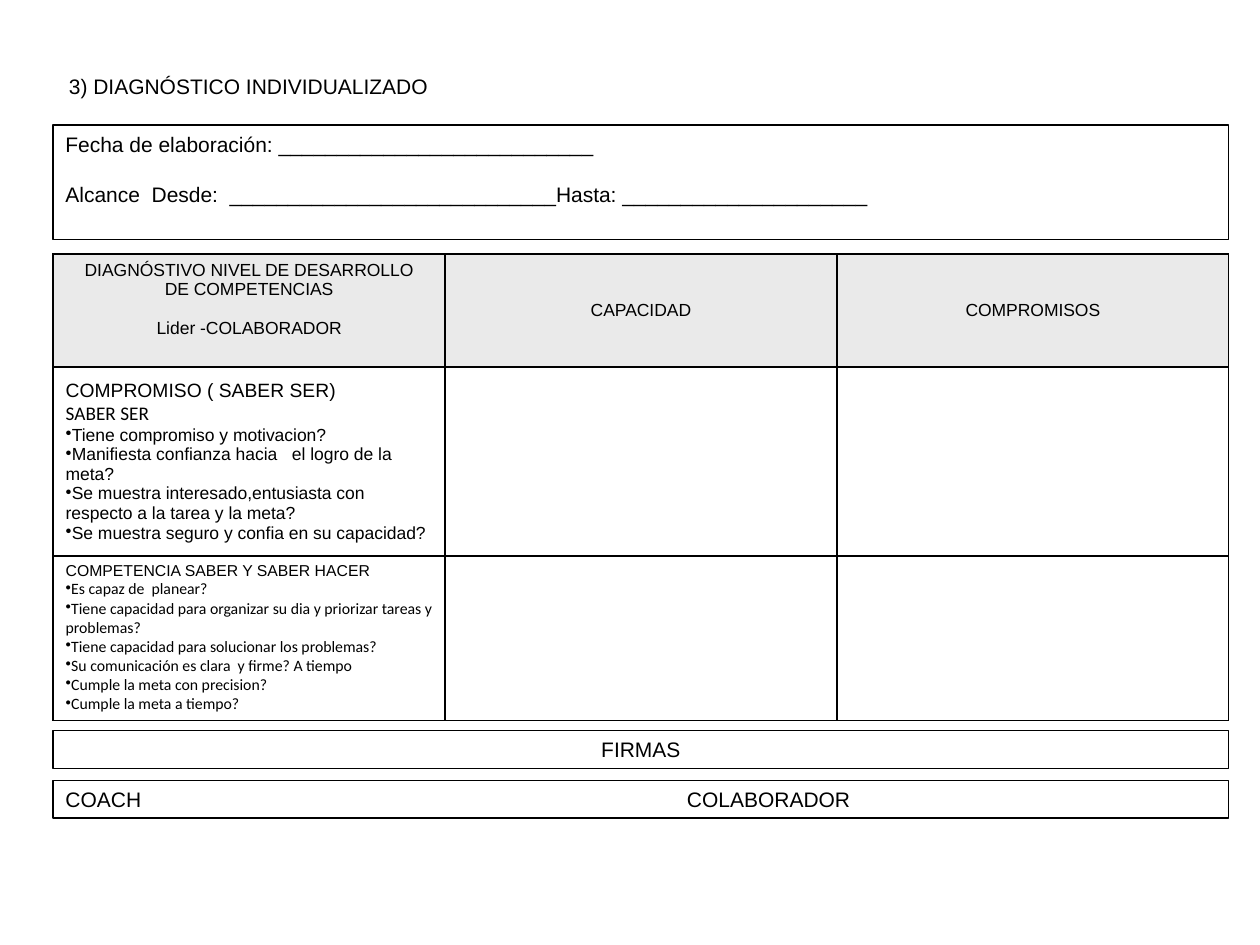
from pptx import Presentation
from pptx.dml.color import RGBColor
from pptx.enum.shapes import MSO_SHAPE as Shape
from pptx.enum.text import MSO_ANCHOR as Anchor, PP_ALIGN as Align
from pptx.oxml import parse_xml
from pptx.oxml.ns import nsdecls
from pptx.util import Cm, Pt

BLACK, GRAY = "000000", "EAEAEA"
LEFT, WIDTH = 1.07, 23.7
BAR_HEIGHT = 0.76
ROW_HEIGHTS = [2.28, 3.81, 3.3]

# Each line: text, size, font, bulleted, space before in points
HEADERS = [
    [("DIAGNÓSTIVO NIVEL DE DESARROLLO", 10, "Arial", False, 0),
     ("DE COMPETENCIAS", 10, "Arial", False, 0),
     ("Lider -COLABORADOR", 10, "Arial", False, 11.2)],
    [("CAPACIDAD", 10, "Arial", False, 0)],
    [("COMPROMISOS", 10, "Arial", False, 0)],
]
COMMITMENT = [
    ("COMPROMISO ( SABER SER)", 11, "Arial", False, 0),
    ("SABER SER", 11, "Calibri", False, 0),
] + [(text, 10, "Arial", True, 0) for text in (
    "Tiene compromiso y motivacion?",
    "Manifiesta confianza hacia   el logro de la meta?",
    "Se muestra interesado,entusiasta con respecto a la tarea y la meta?",
    "Se muestra seguro y confia en su capacidad?",
)]
COMPETENCE = [
    ("COMPETENCIA SABER Y SABER HACER", 9, "Arial", False, 0),
] + [(text, 9, "Calibri", True, 0) for text in (
    "Es capaz de  planear?",
    "Tiene capacidad para organizar su dia y priorizar tareas y problemas?",
    "Tiene capacidad para solucionar los problemas?",
    "Su comunicación es clara  y firme? A tiempo",
    "Cumple la meta con precision?",
    "Cumple la meta a tiempo?",
)]


def color(value):
    return RGBColor.from_string(value)


def add_bullet(para):
    props = para._p.get_or_add_pPr()
    props.set("marL", "0")
    props.set("indent", "0")
    props.append(parse_xml(f'<a:buChar {nsdecls("a")} char="•"/>'))


def add_tab(para, position):
    para._p.get_or_add_pPr().append(parse_xml(
        f'<a:tabLst {nsdecls("a")}><a:tab pos="{Cm(position)}" algn="l"/></a:tabLst>'))


def write(frame, lines, align=Align.LEFT):
    frame.word_wrap = True
    for index, (text, size, font, bulleted, space) in enumerate(lines):
        para = frame.paragraphs[0] if index == 0 else frame.add_paragraph()
        para.text = text
        para.alignment = align
        if space:
            para.space_before = Pt(space)
        if bulleted:
            add_bullet(para)
        for span in para.runs:
            span.font.size = Pt(size)
            span.font.name = font
            span.font.color.rgb = color(BLACK)


def add_title(page, left, top, width, height):
    box = page.shapes.add_textbox(Cm(left), Cm(top), Cm(width), Cm(height))
    write(box.text_frame, [("3) DIAGNÓSTICO INDIVIDUALIZADO", 12, "Arial", False, 0)])


def add_framed_box(page, left, top, width, height, lines, align=Align.LEFT):
    box = page.shapes.add_shape(Shape.RECTANGLE, Cm(left), Cm(top), Cm(width), Cm(height))
    box.shadow.inherit = False
    box.fill.background()
    box.line.color.rgb = color(BLACK)
    box.line.width = Pt(0.75)
    box.text_frame.vertical_anchor = Anchor.TOP
    write(box.text_frame, lines, align)
    return box


def add_dates(page, left, top, width, height):
    period = "Alcance  Desde:  " + "_" * 28 + "Hasta: " + "_" * 21
    add_framed_box(page, left, top, width, height, [
        ("Fecha de elaboración: " + "_" * 27, 12, "Arial", False, 0),
        (period, 12, "Arial", False, 14.6),
    ])


def add_borders(cell):
    props = cell._tc.get_or_add_tcPr()
    for side in "LRTB":
        props.append(parse_xml(
            f'<a:ln{side} {nsdecls("a")} w="{Pt(1)}"><a:solidFill>'
            f'<a:srgbClr val="{BLACK}"/></a:solidFill></a:ln{side}>'))


def add_diagnosis(page, left, top, width, row_heights):
    rows = [HEADERS, [COMMITMENT, [], []], [COMPETENCE, [], []]]
    table = page.shapes.add_table(
        len(rows), len(HEADERS), Cm(left), Cm(top), Cm(width), Cm(sum(row_heights))).table
    table.first_row = table.horz_banding = False
    for column in table.columns:
        column.width = Cm(width / len(HEADERS))
    for row, (height, contents) in enumerate(zip(row_heights, rows)):
        table.rows[row].height = Cm(height)
        for col, lines in enumerate(contents):
            cell = table.cell(row, col)
            add_borders(cell)
            if row == 0:
                cell.fill.solid()
                cell.fill.fore_color.rgb = color(GRAY)
            else:
                cell.fill.background()
            cell.vertical_anchor = Anchor.TOP if row == col == 0 else Anchor.MIDDLE
            write(cell.text_frame, lines, Align.CENTER if row == 0 else Align.LEFT)


def add_signatures(page, left, top, width):
    add_framed_box(page, left, top, width, BAR_HEIGHT,
                   [("FIRMAS", 12, "Arial", False, 0)], Align.CENTER)
    names = add_framed_box(page, left, top + 1, width, BAR_HEIGHT,
                           [("COACH\tCOLABORADOR", 12, "Arial", False, 0)])
    add_tab(names.text_frame.paragraphs[0], 12.53)


def main():
    deck = Presentation()
    deck.slide_width, deck.slide_height = Cm(25.4), Cm(19.05)
    page = deck.slides.add_slide(deck.slide_layouts[6])

    # Heading and dates
    add_title(page, 1.14, 1.35, 13.77, BAR_HEIGHT)
    add_dates(page, LEFT, 2.52, WIDTH, 2.31)
    # Diagnosis table
    add_diagnosis(page, LEFT, 5.12, WIDTH, ROW_HEIGHTS)
    # Signature bars
    add_signatures(page, LEFT, 14.73, WIDTH)

    deck.save("out.pptx")


if __name__ == "__main__":
    main()
